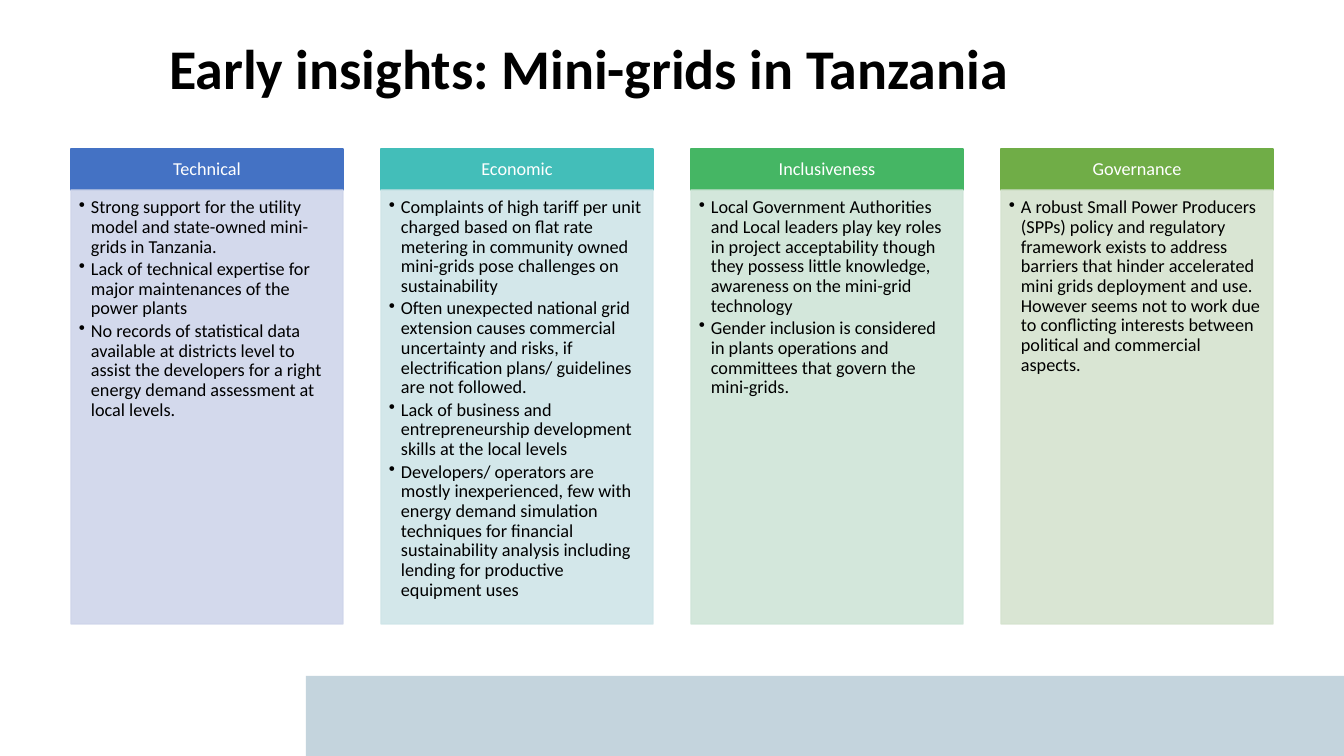
from lxml.etree import SubElement
from pptx import Presentation
from pptx.dml.color import RGBColor
from pptx.enum.shapes import MSO_SHAPE
from pptx.enum.text import MSO_ANCHOR, PP_ALIGN
from pptx.oxml.ns import qn
from pptx.util import Emu, Pt

BLACK = RGBColor(0x00, 0x00, 0x00)
WHITE = RGBColor(0xFF, 0xFF, 0xFF)
FOOTER_BLUE = RGBColor(0xC4, 0xD4, 0xDD)
BLUE, PALE_BLUE = RGBColor(0x44, 0x72, 0xC4), RGBColor(0xCF, 0xD5, 0xEA)
TEAL, PALE_TEAL = RGBColor(0x43, 0xBE, 0xB9), RGBColor(0xCF, 0xE5, 0xE8)
GREEN, PALE_GREEN = RGBColor(0x45, 0xB6, 0x64), RGBColor(0xCF, 0xE5, 0xD8)
OLIVE, PALE_OLIVE = RGBColor(0x70, 0xAD, 0x47), RGBColor(0xD5, 0xE3, 0xCF)

SLIDE_WIDTH, SLIDE_HEIGHT = 1344, 756
FIRST_LEFT, COLUMN_PITCH, COLUMN_WIDTH = 71, 310, 272
HEADER_TOP, HEADER_HEIGHT, BODY_HEIGHT = 149, 41, 434

INSIGHTS = [
    ("Technical", BLUE, PALE_BLUE, [
        "Strong support for the utility model and state-owned mini-grids in Tanzania.",
        "Lack of technical expertise for major maintenances of the power plants",
        "No records of statistical data available at districts level to assist the "
        "developers for a right energy demand assessment at local levels.",
    ]),
    ("Economic", TEAL, PALE_TEAL, [
        "Complaints of high tariff per unit charged based on flat rate metering in "
        "community owned mini-grids pose challenges on sustainability",
        "Often unexpected national grid extension causes commercial uncertainty and "
        "risks, if electrification plans/ guidelines are not followed.",
        "Lack of business and entrepreneurship development skills at the local levels",
        "Developers/ operators are mostly inexperienced, few with energy demand "
        "simulation techniques for financial sustainability analysis including "
        "lending for productive equipment uses",
    ]),
    ("Inclusiveness", GREEN, PALE_GREEN, [
        "Local Government Authorities and Local leaders play key roles in project "
        "acceptability though they possess little knowledge, awareness on the "
        "mini-grid technology",
        "Gender inclusion is considered in plants operations and committees that "
        "govern the mini-grids.",
    ]),
    ("Governance", OLIVE, PALE_OLIVE, [
        "A robust Small Power Producers (SPPs) policy and regulatory framework exists "
        "to address barriers that hinder accelerated mini grids deployment and use. "
        "However seems not to work due to conflicting interests between political and "
        "commercial aspects.",
    ]),
]


def px(length):
    """Turn whole pixels into EMU."""
    return Emu(round(length * 12192000 / SLIDE_WIDTH))


class InsightSlide:
    """Hold the text style and the slide being drawn."""

    font = "Calibri"
    line_spacing = 0.9

    def __init__(self, slide):
        """Keep the slide to draw on."""
        self.slide = slide

    def fill_text(self, frame, lines, size, color, insets, bold=False,
                  align=PP_ALIGN.LEFT, anchor=MSO_ANCHOR.MIDDLE, bulleted=False):
        """Fill a text frame with styled paragraphs."""
        frame.word_wrap = True
        frame.vertical_anchor = anchor
        (frame.margin_left, frame.margin_top,
         frame.margin_right, frame.margin_bottom) = map(px, insets)
        frame.text = "\n".join(lines)
        for paragraph in frame.paragraphs:
            if bulleted:
                self.bullet(paragraph)
                paragraph.space_after = Pt(2)
            paragraph.alignment = align
            paragraph.line_spacing = self.line_spacing
            for run in paragraph.runs:
                run.font.name = self.font
                run.font.size = Pt(size)
                run.font.bold = bold
                run.font.color.rgb = color

    def bullet(self, paragraph):
        """Give a paragraph a hanging bullet."""
        properties = paragraph._p.get_or_add_pPr()
        properties.set("marL", str(px(12)))
        properties.set("indent", str(-px(12)))
        SubElement(properties, qn("a:buChar"), char="•")

    def title(self, text, left, top, width, height):
        """Add the slide heading."""
        heading = self.slide.shapes.add_textbox(px(left), px(top), px(width), px(height))
        self.fill_text(heading.text_frame, [text], 40, BLACK, (10, 5, 10, 5), bold=True)

    def block(self, color, left, top, width, height, outlined=True, opacity=100):
        """Add a filled rectangle and return it."""
        block = self.slide.shapes.add_shape(
            MSO_SHAPE.RECTANGLE, px(left), px(top), px(width), px(height))
        block.shadow.inherit = False
        block.fill.solid()
        block.fill.fore_color.rgb = color
        if outlined:
            block.line.color.rgb = color
            block.line.width = Pt(1)
        else:
            block.line.fill.background()
        if opacity < 100:
            for tint in block._element.spPr.iter(qn("a:srgbClr")):
                SubElement(tint, qn("a:alpha"), val=str(opacity * 1000))
        return block

    def column(self, left, theme, color, pale, findings):
        """Add a theme header above its panel of findings."""
        header = self.block(color, left, HEADER_TOP, COLUMN_WIDTH, HEADER_HEIGHT)
        self.fill_text(header.text_frame, [theme], 13, WHITE, (10, 6, 10, 6),
                       align=PP_ALIGN.CENTER)
        panel = self.block(pale, left, HEADER_TOP + HEADER_HEIGHT, COLUMN_WIDTH,
                           BODY_HEIGHT, opacity=90)
        self.fill_text(panel.text_frame, findings, 13, BLACK, (8, 8, 10, 11),
                       anchor=MSO_ANCHOR.TOP, bulleted=True)


def main():
    """Build and save the slide."""
    deck = Presentation()
    deck.slide_width, deck.slide_height = px(SLIDE_WIDTH), px(SLIDE_HEIGHT)
    page = InsightSlide(deck.slides.add_slide(deck.slide_layouts[6]))
    page.block(FOOTER_BLUE, 306, 676, SLIDE_WIDTH - 306, SLIDE_HEIGHT - 676, outlined=False)
    for index, insight in enumerate(INSIGHTS):
        page.column(FIRST_LEFT + index * COLUMN_PITCH, *insight)
    page.title("Early insights: Mini-grids in Tanzania", 159, 23, 1107, 97)
    deck.save("out.pptx")


if __name__ == "__main__":
    main()
